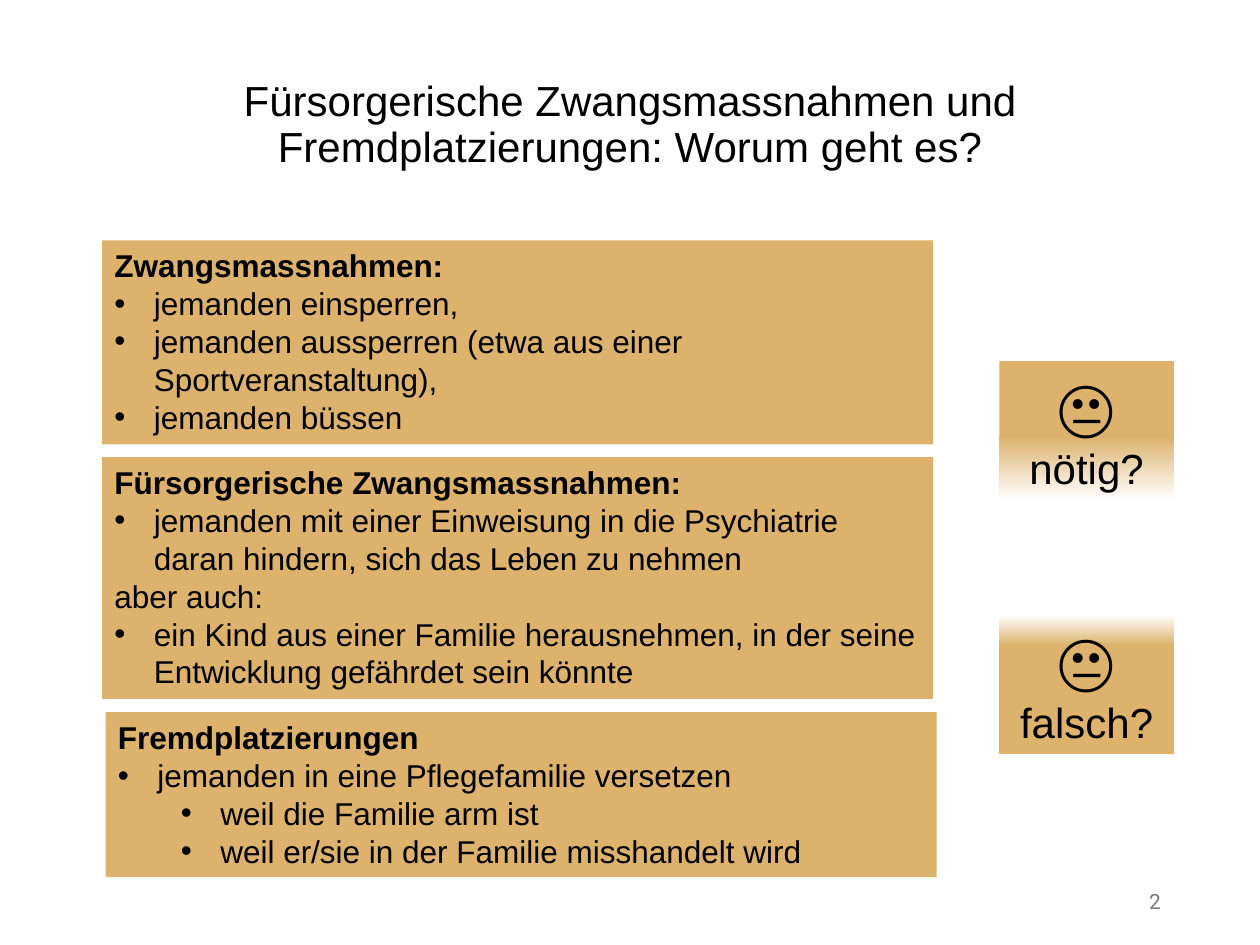
from copy import deepcopy
from dataclasses import dataclass
from typing import NamedTuple

from lxml import etree
from pptx import Presentation
from pptx.dml.color import RGBColor
from pptx.enum import shapes as kinds, text as txt
from pptx.oxml import ns
from pptx.util import Pt


@dataclass(frozen=True)
class Theme:
    font: str = "Arial"
    number_font: str = "Roboto"
    ink: str = "000000"
    sand: str = "DCB26C"
    white: str = "FFFFFF"
    grey: str = "797979"
    title: float = 24
    body: float = 18
    face: float = 36
    verdict: float = 24
    number: float = 12


THEME = Theme()
HANGING = 22.5
LEVEL_STEP = 36
FACE = "😐"


class Box(NamedTuple):
    left: float
    top: float
    width: float
    height: float

    def lengths(self) -> list:
        return [Pt(value) for value in self]


class Item(NamedTuple):
    wording: str
    level: int | None = 0  # None: no bullet


class Topic(NamedTuple):
    box: Box
    heading: str
    items: list[Item]


class Verdict(NamedTuple):
    box: Box
    wording: str
    stops: list[tuple[float, str]]


TOPICS = [
    Topic(Box(58.3, 137.3, 475, 116.6), "Zwangsmassnahmen:", [
        Item("jemanden einsperren,"),
        Item("jemanden aussperren (etwa aus einer Sportveranstaltung),"),
        Item("jemanden büssen"),
    ]),
    Topic(Box(58.3, 261.2, 475, 138.2), "Fürsorgerische Zwangsmassnahmen:", [
        Item("jemanden mit einer Einweisung in die Psychiatrie "
             "daran hindern, sich das Leben zu nehmen"),
        Item("aber auch:", None),
        Item("ein Kind aus einer Familie herausnehmen, in der seine "
             "Entwicklung gefährdet sein könnte"),
    ]),
    Topic(Box(60.3, 407, 475, 94.3), "Fremdplatzierungen", [
        Item("jemanden in eine Pflegefamilie versetzen"),
        Item("weil die Familie arm ist", 1),
        Item("weil er/sie in der Familie misshandelt wird", 1),
    ]),
]

VERDICTS = [
    Verdict(Box(571, 206.2, 99.8, 79.5), "nötig?",
            [(0.01, THEME.sand), (0.54, THEME.sand), (1, THEME.white)]),
    Verdict(Box(571, 351.4, 99.8, 79.5), "falsch?",
            [(0, THEME.white), (0.22, THEME.sand), (1, THEME.sand)]),
]


def add_run(paragraph, wording: str, size: float, bold: bool = False,
            font: str = THEME.font, color: str = THEME.ink) -> None:
    run = paragraph.add_run()
    run.text = wording
    run.font.name = font
    run.font.size = Pt(size)
    run.font.bold = bold
    run.font.color.rgb = RGBColor.from_string(color)


def add_bullet(paragraph, level: int) -> None:
    paragraph.level = level
    properties = paragraph._p.get_or_add_pPr()
    properties.set("marL", str(Pt(HANGING + level * LEVEL_STEP)))
    properties.set("indent", str(-Pt(HANGING)))
    font = etree.SubElement(properties, ns.qn("a:buFont"))
    font.set("typeface", THEME.font)
    etree.SubElement(properties, ns.qn("a:buChar")).set("char", "•")


def add_panel(slide, box: Box):
    """Add a borderless rectangle whose text starts at the top."""
    panel = slide.shapes.add_shape(kinds.MSO_SHAPE.RECTANGLE, *box.lengths())
    panel.shadow.inherit = False
    panel.line.fill.background()
    frame = panel.text_frame
    frame.word_wrap = True
    frame.auto_size = txt.MSO_AUTO_SIZE.SHAPE_TO_FIT_TEXT
    frame.vertical_anchor = txt.MSO_ANCHOR.TOP
    return panel


def fade_down(panel, stops: list[tuple[float, str]]) -> None:
    """Fill from top to bottom with any number of colour stops."""
    panel.fill.gradient()
    panel.fill.gradient_angle = 270
    stop_list = panel.element.spPr.find(".//" + ns.qn("a:gsLst"))
    while len(stop_list) < len(stops):
        stop_list.append(deepcopy(stop_list[-1]))
    for stop, (position, color) in zip(panel.fill.gradient_stops, stops):
        stop.position = position
        stop.color.rgb = RGBColor.from_string(color)


def add_topic(slide, topic: Topic) -> None:
    panel = add_panel(slide, topic.box)
    panel.fill.solid()
    panel.fill.fore_color.rgb = RGBColor.from_string(THEME.sand)
    frame = panel.text_frame
    heading = frame.paragraphs[0]
    heading.alignment = txt.PP_ALIGN.LEFT
    add_run(heading, topic.heading, THEME.body, bold=True)
    for item in topic.items:
        paragraph = frame.add_paragraph()
        paragraph.alignment = txt.PP_ALIGN.LEFT
        if item.level is not None:
            add_bullet(paragraph, item.level)
        add_run(paragraph, item.wording, THEME.body)


def add_verdict(slide, verdict: Verdict) -> None:
    panel = add_panel(slide, verdict.box)
    fade_down(panel, verdict.stops)
    face = panel.text_frame.paragraphs[0]
    question = panel.text_frame.add_paragraph()
    face.alignment = question.alignment = txt.PP_ALIGN.CENTER
    add_run(face, FACE, THEME.face)
    add_run(question, verdict.wording, THEME.verdict)


def set_title(slide, wording: str, box: Box) -> None:
    title = slide.shapes.title
    title.left, title.top, title.width, title.height = box.lengths()
    title.text_frame.vertical_anchor = txt.MSO_ANCHOR.MIDDLE
    paragraph = title.text_frame.paragraphs[0]
    paragraph.alignment = txt.PP_ALIGN.CENTER
    paragraph.line_spacing = 0.9
    add_run(paragraph, wording, THEME.title)


def add_page_number(slide, number: str, box: Box) -> None:
    frame = slide.shapes.add_textbox(*box.lengths()).text_frame
    frame.word_wrap = True
    frame.vertical_anchor = txt.MSO_ANCHOR.MIDDLE
    paragraph = frame.paragraphs[0]
    paragraph.alignment = txt.PP_ALIGN.RIGHT
    add_run(paragraph, number, THEME.number,
            font=THEME.number_font, color=THEME.grey)


def main() -> None:
    deck = Presentation()
    deck.slide_width, deck.slide_height = Pt(720), Pt(540)
    slide = deck.slides.add_slide(deck.slide_layouts.get_by_name("Title Only"))
    set_title(slide, "Fürsorgerische Zwangsmassnahmen und "
              "Fremdplatzierungen: Worum geht es?", Box(49.5, 28.8, 621, 86.4))
    for topic in TOPICS:
        add_topic(slide, topic)
    for verdict in VERDICTS:
        add_verdict(slide, verdict)
    add_page_number(slide, "2", Box(508.5, 500.5, 162, 28.8))
    deck.save("out.pptx")


if __name__ == "__main__":
    main()
